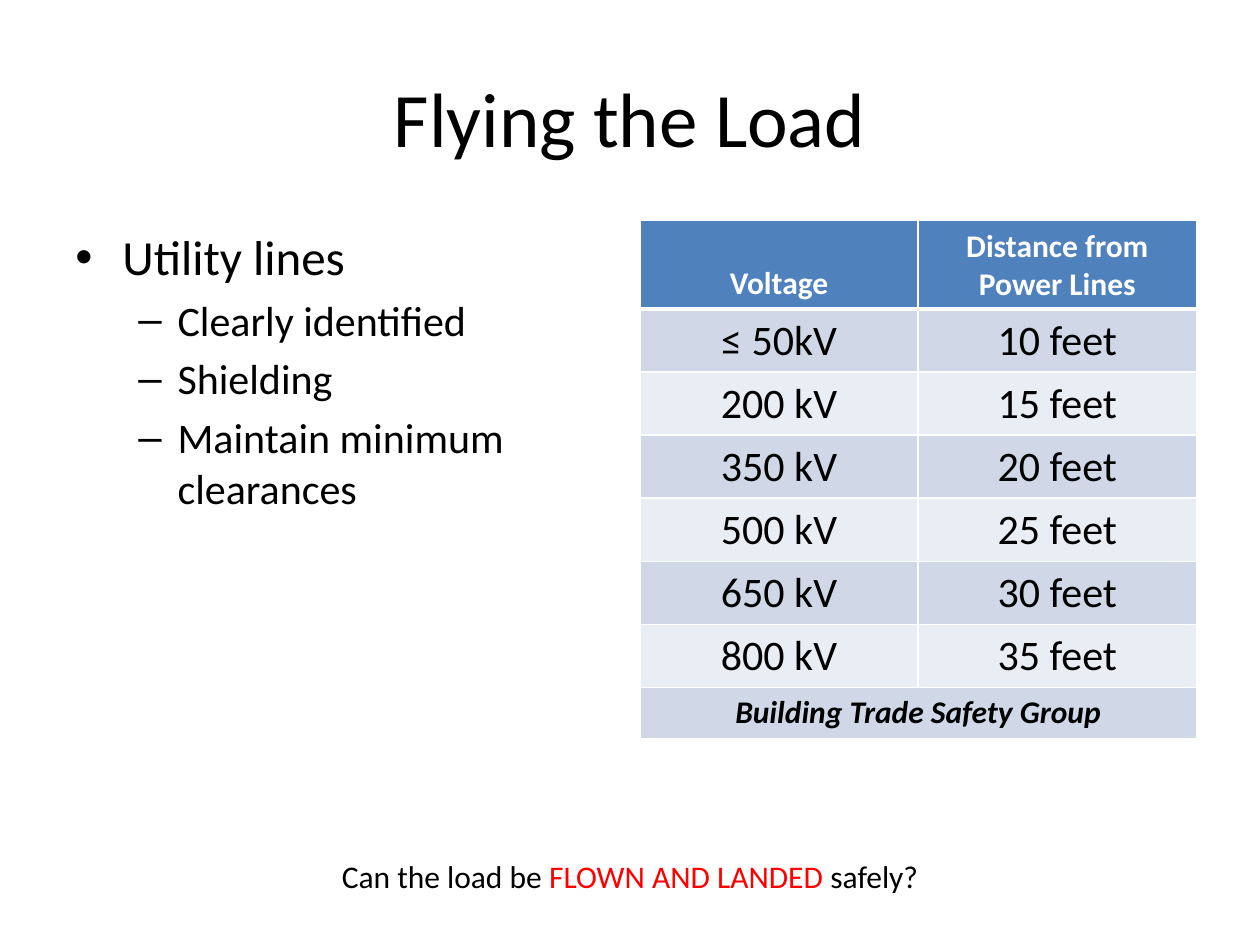
from lxml import etree
from pptx import Presentation
from pptx.dml.color import RGBColor
from pptx.enum.text import MSO_ANCHOR, PP_ALIGN
from pptx.oxml.ns import qn
from pptx.util import Cm, Pt

MID = PP_ALIGN.CENTER
TOP, CORE, LOW = MSO_ANCHOR.TOP, MSO_ANCHOR.MIDDLE, MSO_ANCHOR.BOTTOM


def style(para, size, tint="000000", bold=False, slant=False):
    for run in para.runs:
        font = run.font
        font.name, font.size = "Calibri", Pt(size)
        font.bold, font.italic = bold, slant
        font.color.rgb = RGBColor.from_string(tint)


def edge(cell, side, width):
    line = etree.SubElement(cell._tc.get_or_add_tcPr(), qn("a:ln" + side), w=str(Pt(width)))
    fill = etree.SubElement(line, qn("a:solidFill"))
    etree.SubElement(fill, qn("a:srgbClr"), val="FFFFFF")


deck = Presentation()
deck.slide_width, deck.slide_height = Cm(25.4), Cm(19.05)
slide = deck.slides.add_slide(deck.slide_layouts[5])

title = slide.shapes.title
title.left, title.top, title.width, title.height = Cm(1.27), Cm(0.76), Cm(22.86), Cm(3.18)
title.text_frame.text = "Flying the Load"
title.text_frame.vertical_anchor = CORE
title.text_frame.paragraphs[0].alignment = MID
style(title.text_frame.paragraphs[0], 44)

points = [
    (0, "Utility lines"),
    (1, "Clearly identified"),
    (1, "Shielding"),
    (1, "Maintain minimum clearances"),
]
looks = [("•", 28, 0.95, 0.95), ("–", 24, 2.06, 0.79)]
body = slide.shapes.add_textbox(Cm(1.27), Cm(4.45), Cm(11.22), Cm(12.57)).text_frame
body.word_wrap = True
body.text = "\n".join(text for level, text in points)
for para, (level, text) in zip(body.paragraphs, points):
    mark, size, left, hang = looks[level]
    props = para._p.get_or_add_pPr()
    props.set("marL", str(Cm(left)))
    props.set("indent", str(-Cm(hang)))
    etree.SubElement(props, qn("a:buFont"), typeface="Arial")
    etree.SubElement(props, qn("a:buChar"), char=mark)
    para.level = level
    para.space_before = Pt(size * 0.2 if level else 0)
    style(para, size)

rows = [
    ("Voltage", "Distance from Power Lines"),
    ("≤ 50kV", "10 feet"),
    ("200 kV", "15 feet"),
    ("350 kV", "20 feet"),
    ("500 kV", "25 feet"),
    ("650 kV", "30 feet"),
    ("800 kV", "35 feet"),
    ("Building Trade Safety Group", ""),
]
tall = [1.78] + [1.27] * 6 + [1.03]
last = len(rows) - 1
grid = slide.shapes.add_table(len(rows), 2, Cm(12.9), Cm(4.45), Cm(11.22), Cm(sum(tall))).table
for row, words in enumerate(rows):
    grid.rows[row].height = Cm(tall[row])
    head, foot = row == 0, row == last
    for col, word in enumerate(words):
        cell = grid.cell(row, col)
        cell.text_frame.text = word
        cell.vertical_anchor = LOW if head else TOP
        for side in "LRTB":
            thick = (head and side == "B") or (row == 1 and side == "T")
            edge(cell, side, 3 if thick else 1)
        cell.fill.solid()
        shade = "4F81BD" if head else "D0D8E8" if row % 2 else "E9EDF4"
        cell.fill.fore_color.rgb = RGBColor.from_string(shade)
        para = cell.text_frame.paragraphs[0]
        para.alignment = MID
        style(para, 18 if head or foot else 24, "FFFFFF" if head else "000000", head or foot, foot)
grid.cell(last, 0).merge(grid.cell(last, 1))

note = slide.shapes.add_textbox(Cm(2.54), Cm(17.15), Cm(20.32), Cm(1.02)).text_frame
note.word_wrap = True
para = note.paragraphs[0]
para.alignment = MID
for text in ("Can the load be ", "FLOWN AND LANDED ", "safely?"):
    para.add_run().text = text
style(para, 18)
para.runs[1].font.color.rgb = RGBColor.from_string("FF0000")

deck.save("out.pptx")
